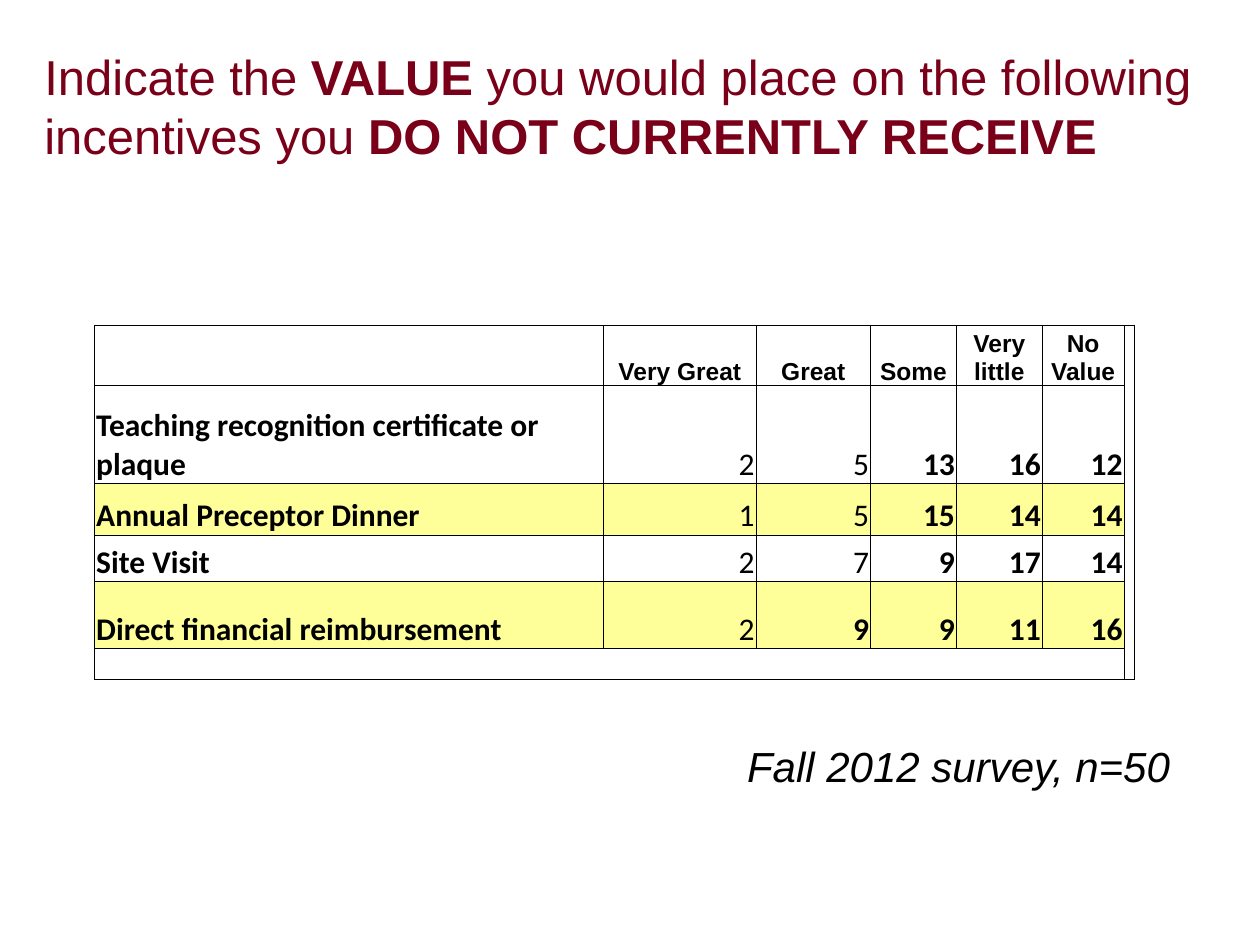
from lxml import etree
from pptx import Presentation
from pptx.dml.color import RGBColor
from pptx.enum.text import MSO_ANCHOR, MSO_AUTO_SIZE, PP_ALIGN
from pptx.oxml.ns import qn
from pptx.util import Cm, Pt

MIDDLE, BOTTOM = MSO_ANCHOR.MIDDLE, MSO_ANCHOR.BOTTOM
LEFT, CENTER, RIGHT = PP_ALIGN.LEFT, PP_ALIGN.CENTER, PP_ALIGN.RIGHT
NO_FIT = MSO_AUTO_SIZE.NONE
FIT_SHAPE = MSO_AUTO_SIZE.SHAPE_TO_FIT_TEXT
BLACK, MAROON, YELLOW = "000000", "7A0019", "FFFF99"


def add_run(para, text, font, size, color=BLACK, bold=False, italic=False):
    span = para.add_run()
    span.text = text
    span.font.name = font
    span.font.size = Pt(size)
    span.font.color.rgb = RGBColor.from_string(color)
    span.font.bold = bold
    span.font.italic = italic


def add_borders(cell, color=BLACK, width=0.5):
    properties = cell._tc.get_or_add_tcPr()
    for position, side in enumerate(("a:lnL", "a:lnR", "a:lnT", "a:lnB")):
        line = etree.Element(qn(side), w=str(Pt(width)))
        fill = etree.SubElement(line, qn("a:solidFill"))
        etree.SubElement(fill, qn("a:srgbClr"), val=color)
        properties.insert(position, line)


deck = Presentation()
deck.slide_width, deck.slide_height = Cm(25.4), Cm(19.05)
slide = deck.slides.add_slide(deck.slide_layouts[5])

# Title
title = slide.shapes.title
title.left, title.top, title.width, title.height = Cm(0.64), Cm(0), Cm(24.33), Cm(4.24)
frame = title.text_frame
frame.word_wrap = True
frame.auto_size = NO_FIT
frame.vertical_anchor = MIDDLE
para = frame.paragraphs[0]
para.alignment = LEFT
for text, bold in (
    ("Indicate the ", False),
    ("VALUE", True),
    (" you would place on the following incentives you ", False),
    ("DO NOT CURRENTLY RECEIVE", True),
):
    add_run(para, text, "Arial", 28, MAROON, bold)

# Table grid
rows = [
    ["", "Very Great", "Great", "Some", "Very little", "No Value"],
    ["Teaching recognition certificate or plaque", 2, 5, 13, 16, 12],
    ["Annual Preceptor Dinner", 1, 5, 15, 14, 14],
    ["Site Visit", 2, 7, 9, 17, 14],
    ["Direct financial reimbursement", 2, 9, 9, 11, 16],
    [],
]
highlighted_rows = (2, 4)
bold_from = 9
column_widths = [10.26, 3.07, 2.31, 1.73, 1.73, 1.65, 0.2]
row_heights = [1.22, 1.98, 1.04, 0.94, 1.35, 0.61]
table = slide.shapes.add_table(
    len(rows), len(column_widths), Cm(1.91), Cm(6.55),
    Cm(sum(column_widths)), Cm(sum(row_heights)),
).table
table.first_row = table.horz_banding = False
for column, width in zip(table.columns, column_widths):
    column.width = Cm(width)
for row, height in zip(table.rows, row_heights):
    row.height = Cm(height)

# Table cells
for r, values in enumerate(rows):
    for c in range(len(column_widths)):
        cell = table.cell(r, c)
        cell.margin_left = cell.margin_right = cell.margin_top = Cm(0.03)
        cell.margin_bottom = Cm(0)
        cell.vertical_anchor = BOTTOM
        if r in highlighted_rows and c < len(values):
            cell.fill.solid()
            cell.fill.fore_color.rgb = RGBColor.from_string(YELLOW)
        else:
            cell.fill.background()
        add_borders(cell)

        para = cell.text_frame.paragraphs[0]
        value = values[c] if c < len(values) else ""
        if value == "":
            # Small type keeps an empty cell from stretching its row
            etree.SubElement(para._p, qn("a:endParaRPr"), sz="800")
        elif r == 0:
            para.alignment = CENTER
            add_run(para, value, "Arial", 14, bold=True)
        else:
            para.alignment = LEFT if c == 0 else RIGHT
            add_run(para, str(value), "Calibri", 18, bold=c == 0 or value >= bold_from)

# Merged side column and bottom row
last_row, last_column = len(rows) - 1, len(column_widths) - 1
table.cell(0, last_column).merge(table.cell(last_row, last_column))
table.cell(last_row, 0).merge(table.cell(last_row, last_column - 1))

# Survey note
note = slide.shapes.add_textbox(Cm(14.81), Cm(14.81), Cm(9.17), Cm(1.27))
note.text_frame.word_wrap = False
note.text_frame.auto_size = FIT_SHAPE
add_run(note.text_frame.paragraphs[0], "Fall 2012 survey, n=50", "Arial", 24, italic=True)

deck.save("out.pptx")
